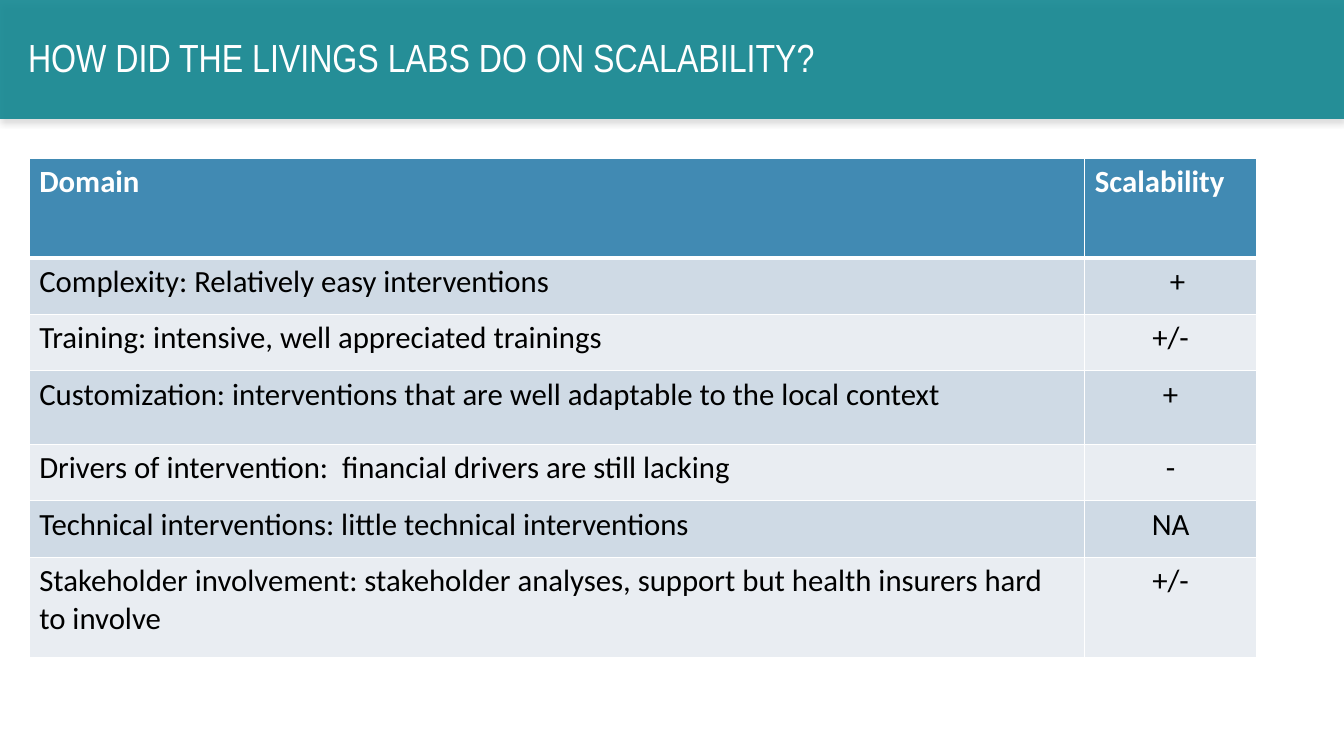
"""Build the slide on the scalability of the living labs."""
from dataclasses import dataclass

from lxml import etree
from pptx import Presentation
from pptx.dml.color import RGBColor
from pptx.enum import shapes, text
from pptx.oxml import ns
from pptx.util import Inches, Pt


@dataclass(frozen=True)
class Theme:
    bar: str = "118690"
    shadow: str = "A6A6A6"
    header: str = "418AB3"
    bands: tuple[str, str] = ("CFDAE5", "E9EDF2")
    light: str = "FFFFFF"
    dark: str = "000000"
    title_font: str = "Arial Narrow"
    body_font: str = "Calibri"
    title_size: int = 28
    body_size: int = 22


@dataclass(frozen=True)
class Row:
    domain: str
    score: str
    height: float = 0.56
    indent: float = 0.1


THEME = Theme()
COLUMNS = (10.47, 1.7)
ROWS = (
    Row("Domain", "Scalability", 0.99),
    Row("Complexity: Relatively easy interventions", "+", indent=0.24),
    Row("Training: intensive, well appreciated trainings", "+/-"),
    Row("Customization: interventions that are well adaptable to the local context", "+", 0.73),
    Row("Drivers of intervention:  financial drivers are still lacking", "-"),
    Row("Technical interventions: little technical interventions", "NA"),
    Row("Stakeholder involvement: stakeholder analyses, support but health insurers hard to involve",
        "+/-", 0.99),
)


def add_xml(parent, tag: str, **attrs):
    """Append a DrawingML element with the given attributes."""
    el = etree.SubElement(parent, ns.qn(tag))
    for key, value in attrs.items():
        el.set(key, str(value))
    return el


def write(tf, words: str, *, size: int = THEME.body_size, font: str = THEME.body_font,
          color: str = THEME.dark, bold: bool = False, align=text.PP_ALIGN.LEFT,
          spacing: float = 1.0) -> None:
    """Write one formatted paragraph into a text frame."""
    p = tf.paragraphs[0]
    p.alignment = align
    p.line_spacing = spacing
    r = p.add_run()
    r.text = words
    r.font.size = Pt(size)
    r.font.name = font
    r.font.bold = bold
    r.font.color.rgb = RGBColor.from_string(color)


def add_bar(slide) -> None:
    """Draw the translucent title bar with its soft shadow."""
    sp = slide.shapes.add_shape(shapes.MSO_SHAPE.RECTANGLE, 0, 0, Inches(13.33), Inches(1.18))
    sp.fill.solid()
    sp.fill.fore_color.rgb = RGBColor.from_string(THEME.bar)
    sp.line.fill.background()
    sp.shadow.inherit = False
    props = sp.element.spPr
    add_xml(props.find(f"{ns.qn('a:solidFill')}/{ns.qn('a:srgbClr')}"), "a:alpha", val=90000)
    shadow = add_xml(props.find(ns.qn("a:effectLst")), "a:outerShdw", blurRad=Pt(4),
                     dist=Pt(3), dir=5400000, algn="t", rotWithShape=0)
    add_xml(add_xml(shadow, "a:srgbClr", val=THEME.shadow), "a:alpha", val=40000)


def add_title(slide, words: str) -> None:
    """Place the title over the bar."""
    sp = slide.shapes.add_textbox(Inches(0.18), Inches(0.13), Inches(11.5), Inches(0.92))
    tf = sp.text_frame
    tf.word_wrap = True
    tf.vertical_anchor = text.MSO_ANCHOR.MIDDLE
    write(tf, words, size=THEME.title_size, font=THEME.title_font, color=THEME.light, spacing=0.9)


def style_cell(cell, fill: str, top: float, bottom: float) -> None:
    """Give a cell its white borders and its fill."""
    props = cell._tc.get_or_add_tcPr()
    for side, width in (("L", 1), ("R", 1), ("T", top), ("B", bottom)):
        line = add_xml(props, f"a:ln{side}", w=Pt(width))
        add_xml(add_xml(line, "a:solidFill"), "a:srgbClr", val=THEME.light)
    cell.fill.solid()
    cell.fill.fore_color.rgb = RGBColor.from_string(fill)


def add_scores(slide, rows: tuple[Row, ...]) -> None:
    """Draw the table of domains and scores."""
    height = sum(row.height for row in rows)
    table = slide.shapes.add_table(len(rows), len(COLUMNS), Inches(0.29), Inches(1.57),
                                   Inches(sum(COLUMNS)), Inches(height)).table
    for column, width in zip(table.columns, COLUMNS):
        column.width = Inches(width)
    for i, row in enumerate(rows):
        table.rows[i].height = Inches(row.height)
        header = i == 0
        fill = THEME.header if header else THEME.bands[(i - 1) % 2]
        for j, words in enumerate((row.domain, row.score)):
            cell = table.cell(i, j)
            style_cell(cell, fill, top=3 if i == 1 else 1, bottom=3 if header else 1)
            centred = j == 1 and not header
            if centred:
                cell.margin_left = Inches(row.indent)
            write(cell.text_frame, words, color=THEME.light if header else THEME.dark, bold=header,
                  align=text.PP_ALIGN.CENTER if centred else text.PP_ALIGN.LEFT)


def main() -> None:
    """Build and save the slide."""
    prs = Presentation()
    prs.slide_width, prs.slide_height = Inches(13.33), Inches(7.5)
    slide = prs.slides.add_slide(prs.slide_layouts[6])
    add_bar(slide)
    add_title(slide, "HOW DID THE LIVINGS LABS DO ON SCALABILITY?")
    add_scores(slide, ROWS)
    prs.save("out.pptx")


if __name__ == "__main__":
    main()
